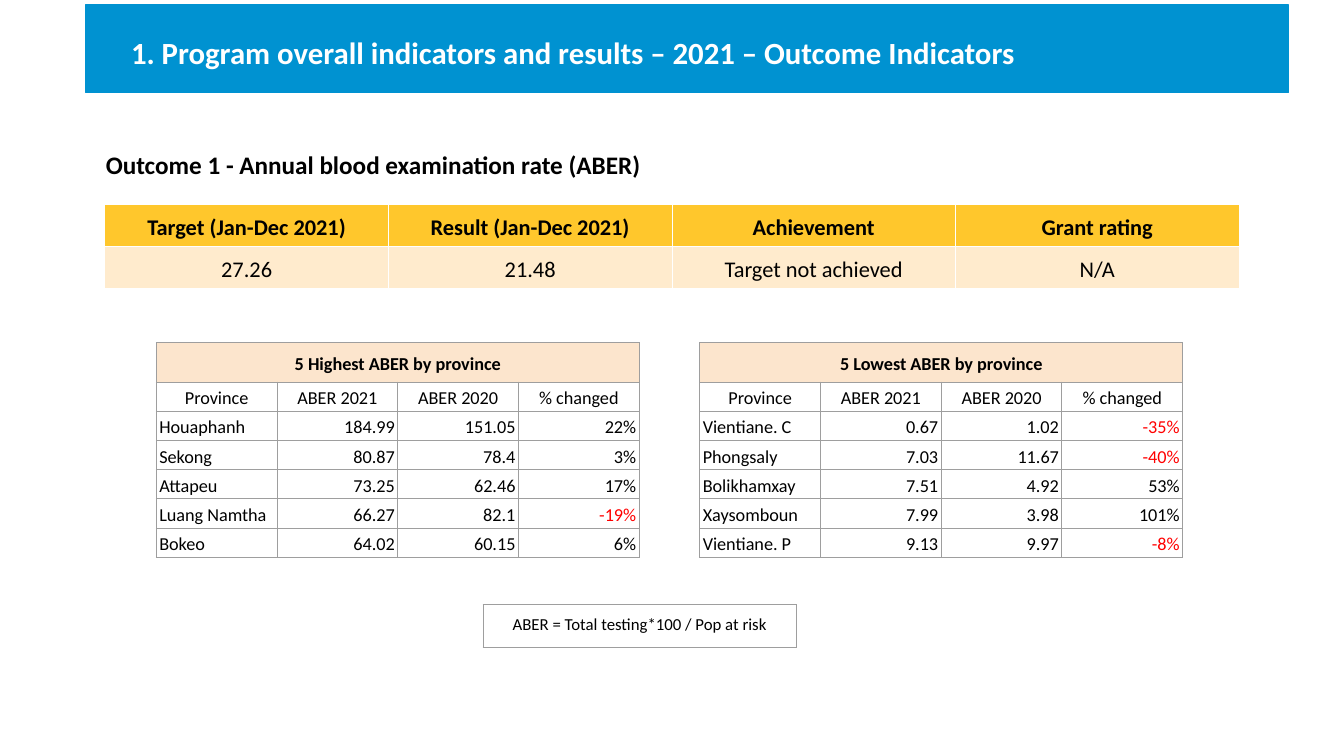
"""Builds the slide of outcome indicators with its ABER tables."""
from dataclasses import dataclass

from lxml import etree
from pptx import Presentation
from pptx import util as u
from pptx.dml.color import RGBColor
from pptx.enum import shapes, text
from pptx.oxml.ns import qn


@dataclass(frozen=True)
class Theme:
    font: str = "Calibri"
    blue: str = "0092D1"
    white: str = "FFFFFF"
    black: str = "000000"
    red: str = "FF0000"
    gold: str = "FFC72C"
    cream: str = "FFEBCD"
    peach: str = "FCE5CD"
    grey: str = "9E9E9E"
    title_size: float = 22
    heading_size: float = 18
    summary_size: float = 16
    province_size: float = 13
    note_size: float = 12
    rule_width: float = 0.75


THEME = Theme()
ALIGN = text.PP_ALIGN
ANCHOR = text.MSO_ANCHOR


@dataclass(frozen=True)
class Style:
    size: float
    color: str = THEME.black
    bold: bool = False
    align: ALIGN = ALIGN.CENTER
    spacing: float = 1.15


@dataclass(frozen=True)
class Area:
    left: float
    top: float
    width: float
    height: float

    def lengths(self) -> tuple:
        return tuple(u.Inches(n) for n in (self.left, self.top, self.width, self.height))


@dataclass(frozen=True)
class Ranking:
    left: float
    title: str
    rows: tuple


HEADERS = ("Province", "ABER 2021", "ABER 2020", "% changed")
RANKINGS = (
    Ranking(1.55, "5 Highest ABER by province", (
        ("Houaphanh", "184.99", "151.05", "22%"),
        ("Sekong", "80.87", "78.4", "3%"),
        ("Attapeu", "73.25", "62.46", "17%"),
        ("Luang Namtha", "66.27", "82.1", "-19%"),
        ("Bokeo", "64.02", "60.15", "6%"),
    )),
    Ranking(6.94, "5 Lowest ABER by province", (
        ("Vientiane. C", "0.67", "1.02", "-35%"),
        ("Phongsaly", "7.03", "11.67", "-40%"),
        ("Bolikhamxay", "7.51", "4.92", "53%"),
        ("Xaysomboun", "7.99", "3.98", "101%"),
        ("Vientiane. P", "9.13", "9.97", "-8%"),
    )),
)
SUMMARY = (
    ("Target (Jan-Dec 2021)", "Result (Jan-Dec 2021)", "Achievement", "Grant rating"),
    ("27.26", "21.48", "Target not achieved", "N/A"),
)


def write(frame, words: str, style: Style) -> None:
    para = frame.paragraphs[0]
    para.alignment = style.align
    para.line_spacing = style.spacing
    span = para.add_run()
    span.text = words
    span.font.name = THEME.font
    span.font.size = u.Pt(style.size)
    span.font.bold = style.bold
    span.font.color.rgb = RGBColor.from_string(style.color)


def set_margins(target, left: float, top: float, right: float, bottom: float) -> None:
    target.margin_left = u.Inches(left)
    target.margin_top = u.Inches(top)
    target.margin_right = u.Inches(right)
    target.margin_bottom = u.Inches(bottom)


def add_borders(cell, color: str) -> None:
    properties = cell._tc.get_or_add_tcPr()
    for side in ("a:lnL", "a:lnR", "a:lnT", "a:lnB"):
        line = etree.SubElement(properties, qn(side), w=str(u.Pt(THEME.rule_width)))
        fill = etree.SubElement(line, qn("a:solidFill"))
        etree.SubElement(fill, qn("a:srgbClr"), val=color)


def add_grid(page, area: Area, heights: list[float], columns: int, border: str):
    table = page.shapes.add_table(len(heights), columns, *area.lengths()).table
    table.first_row = table.horz_banding = False
    for column in table.columns:
        column.width = u.Inches(area.width / columns)
    for row, height in zip(table.rows, heights):
        row.height = u.Inches(height)
    for cell in table.iter_cells():
        add_borders(cell, border)
        cell.fill.background()
        cell.vertical_anchor = ANCHOR.MIDDLE
        set_margins(cell, 0.03, 0.02, 0.03, 0.02)
    return table


def fill_cell(cell, color: str) -> None:
    cell.fill.solid()
    cell.fill.fore_color.rgb = RGBColor.from_string(color)


def add_title(page) -> None:
    box = page.shapes.add_shape(shapes.MSO_SHAPE.RECTANGLE, *Area(0.85, 0.05, 11.93, 0.87).lengths())
    box.shadow.inherit = False
    box.fill.solid()
    box.fill.fore_color.rgb = box.line.color.rgb = RGBColor.from_string(THEME.blue)
    box.line.width = u.Pt(THEME.rule_width)
    frame = box.text_frame
    frame.word_wrap = True
    frame.vertical_anchor = ANCHOR.MIDDLE
    set_margins(frame, 0.45, 0, 0, 0)
    write(frame, "1. Program overall indicators and results – 2021 – Outcome Indicators",
          Style(THEME.title_size, THEME.white, True, ALIGN.LEFT, 1.2))


def add_heading(page) -> None:
    frame = page.shapes.add_textbox(*Area(1.05, 1.39, 11.93, 5.43).lengths()).text_frame
    frame.word_wrap = True
    set_margins(frame, 0, 0, 0, 0)
    write(frame, "Outcome 1 - Annual blood examination rate (ABER)",
          Style(THEME.heading_size, bold=True, align=ALIGN.LEFT, spacing=1.3))


def add_summary(page) -> None:
    table = add_grid(page, Area(1.04, 2.03, 11.25, 0.83), [0.415] * 2, 4, THEME.white)
    for i, (values, color) in enumerate(zip(SUMMARY, (THEME.gold, THEME.cream))):
        for j, value in enumerate(values):
            fill_cell(table.cell(i, j), color)
            write(table.cell(i, j).text_frame, value, Style(THEME.summary_size, bold=i == 0))


def add_ranking(page, ranking: Ranking) -> None:
    heights = [0.39] + [0.29] * (len(ranking.rows) + 1)
    area = Area(ranking.left, 3.4, 4.79, sum(heights))
    table = add_grid(page, area, heights, len(HEADERS), THEME.grey)
    banner = table.cell(0, 0)
    banner.merge(table.cell(0, len(HEADERS) - 1))
    fill_cell(banner, THEME.peach)
    write(banner.text_frame, ranking.title, Style(THEME.province_size, bold=True))
    for j, header in enumerate(HEADERS):
        write(table.cell(1, j).text_frame, header, Style(THEME.province_size))
    for i, values in enumerate(ranking.rows, start=2):
        for j, value in enumerate(values):
            color = THEME.red if value.startswith("-") else THEME.black
            align = ALIGN.RIGHT if j else ALIGN.LEFT
            write(table.cell(i, j).text_frame, value,
                  Style(THEME.province_size, color, align=align))


def add_note(page) -> None:
    cell = add_grid(page, Area(4.79, 6, 3.11, 0.42), [0.42], 1, THEME.grey).cell(0, 0)
    cell.vertical_anchor = ANCHOR.TOP
    set_margins(cell, 0.1, 0.1, 0.1, 0.1)
    write(cell.text_frame, "ABER = Total testing*100 / Pop at risk",
          Style(THEME.note_size, spacing=1.0))


def main() -> None:
    deck = Presentation()
    deck.slide_width = u.Inches(13.33)
    deck.slide_height = u.Inches(7.5)
    page = deck.slides.add_slide(deck.slide_layouts[6])
    add_heading(page)
    add_title(page)
    add_summary(page)
    for ranking in RANKINGS:
        add_ranking(page, ranking)
    add_note(page)
    deck.save("out.pptx")


if __name__ == "__main__":
    main()
